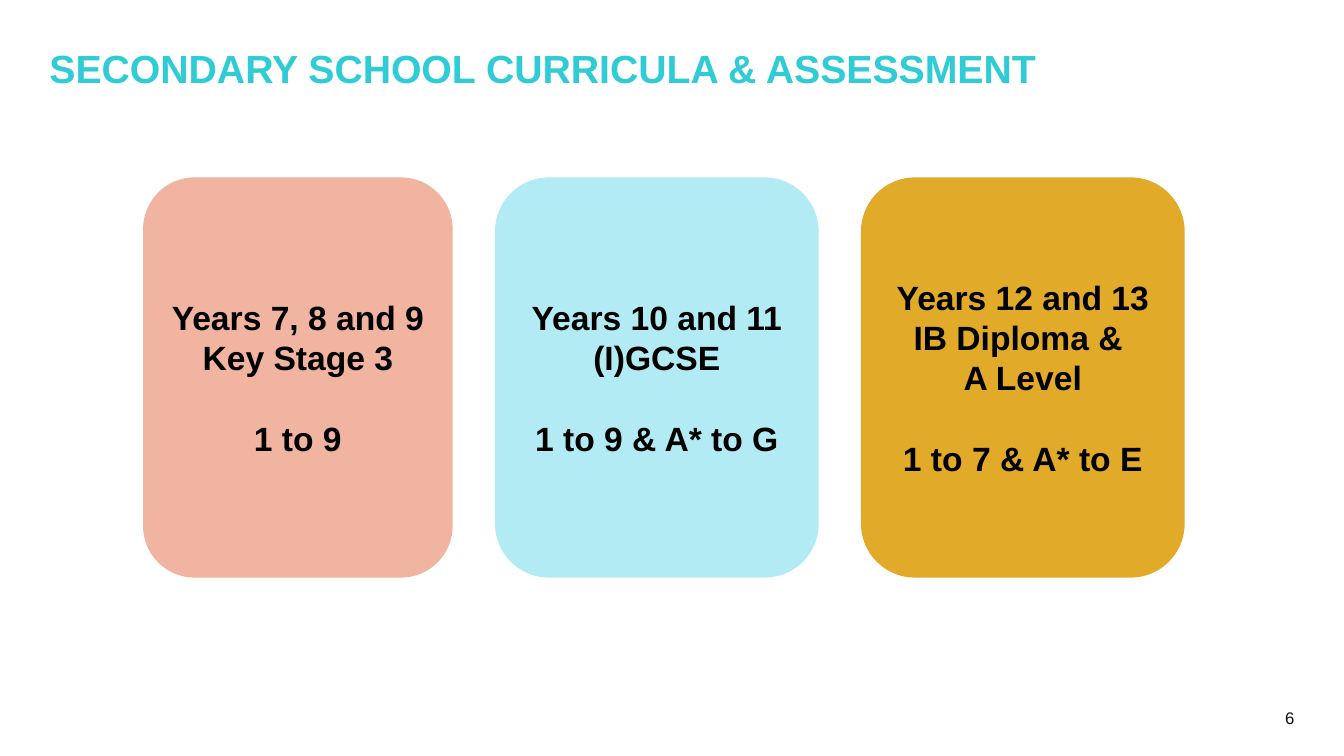
from pptx import Presentation
from pptx import util as u
from pptx.dml.color import RGBColor
from pptx.enum import shapes, text

COLOURS = {
    "title": "2FCCD6",
    "number": "111111",
    "ink": "000000",
    "salmon": "F0B4A0",
    "aqua": "B3EBF4",
    "gold": "E1AA28",
}
FONT = "Arial"
GRID = 100  # columns and rows on the slide

# Colour, width in columns, stage lines, grading scale
STAGES = [
    ("salmon", 23.03, ["Years 7, 8 and 9", "Key Stage 3"], "1 to 9"),
    ("aqua", 24.08, ["Years 10 and 11", "(I)GCSE"], "1 to 9 & A* to G"),
    ("gold", 24.08, ["Years 12 and 13", "IB Diploma & ", "A Level"],
     "1 to 7 & A* to E"),
]
STAGE_LEFT, STAGE_TOP, STAGE_HEIGHT, STAGE_GAP = 10.65, 23.47, 52.93, 3.15
STAGE_LINE = u.Pt(28.8)


def write(para, words, size, colour, bold=False, align=text.PP_ALIGN.LEFT,
          line=None, before=0):
    span = para.add_run()
    span.text = words
    span.font.name = FONT
    span.font.size = u.Pt(size)
    span.font.bold = bold
    span.font.color.rgb = RGBColor.from_string(COLOURS[colour])
    para.alignment = align
    para.line_spacing = line
    para.space_before = before


class SlideBuilder:
    def __init__(self, deck):
        self.deck = deck
        self.slide = deck.slides.add_slide(deck.slide_layouts[5])

    def area(self, left, top, width, height):
        """Turn grid columns and rows into slide lengths."""
        column = self.deck.slide_width / GRID
        row = self.deck.slide_height / GRID
        return (round(left * column), round(top * row),
                round(width * column), round(height * row))

    def plain_frame(self, box):
        """Give the box a wrapped, top-anchored frame without margins."""
        frame = box.text_frame
        frame.word_wrap = True
        frame.auto_size = text.MSO_AUTO_SIZE.NONE
        frame.vertical_anchor = text.MSO_ANCHOR.TOP
        frame.margin_left = frame.margin_right = 0
        frame.margin_top = frame.margin_bottom = 0
        return frame

    def title(self, words, *place):
        box = self.slide.shapes.title
        box.left, box.top, box.width, box.height = self.area(*place)
        write(self.plain_frame(box).paragraphs[0], words, 28, "title",
              bold=True, line=0.9)

    def page_number(self, words, *place):
        box = self.slide.shapes.add_textbox(*self.area(*place))
        write(self.plain_frame(box).paragraphs[0], words, 12, "number",
              align=text.PP_ALIGN.RIGHT)

    def stage_card(self, colour, lines, grades, *place):
        card = self.slide.shapes.add_shape(
            shapes.MSO_SHAPE.ROUNDED_RECTANGLE, *self.area(*place))
        card.shadow.inherit = False
        card.fill.solid()
        card.fill.fore_color.rgb = RGBColor.from_string(COLOURS[colour])
        card.line.fill.background()
        frame = card.text_frame
        frame.word_wrap = True
        frame.vertical_anchor = text.MSO_ANCHOR.MIDDLE
        for index, words in enumerate([*lines, grades]):
            para = frame.add_paragraph() if index else frame.paragraphs[0]
            write(para, words, 24, "ink", bold=True,
                  align=text.PP_ALIGN.CENTER, line=STAGE_LINE,
                  before=STAGE_LINE if index == len(lines) else 0)


def main():
    deck = Presentation()
    deck.slide_width, deck.slide_height = u.Inches(13.33), u.Inches(7.5)
    page = SlideBuilder(deck)
    page.title("SECONDARY SCHOOL CURRICULA & ASSESSMENT",
               3.68, 6.53, 92.63, 11.73)
    page.page_number("6", 73.81, 93.6, 22.5, 5.33)
    left = STAGE_LEFT
    for colour, width, lines, grades in STAGES:
        page.stage_card(colour, lines, grades,
                        left, STAGE_TOP, width, STAGE_HEIGHT)
        left += width + STAGE_GAP
    deck.save("out.pptx")


if __name__ == "__main__":
    main()
